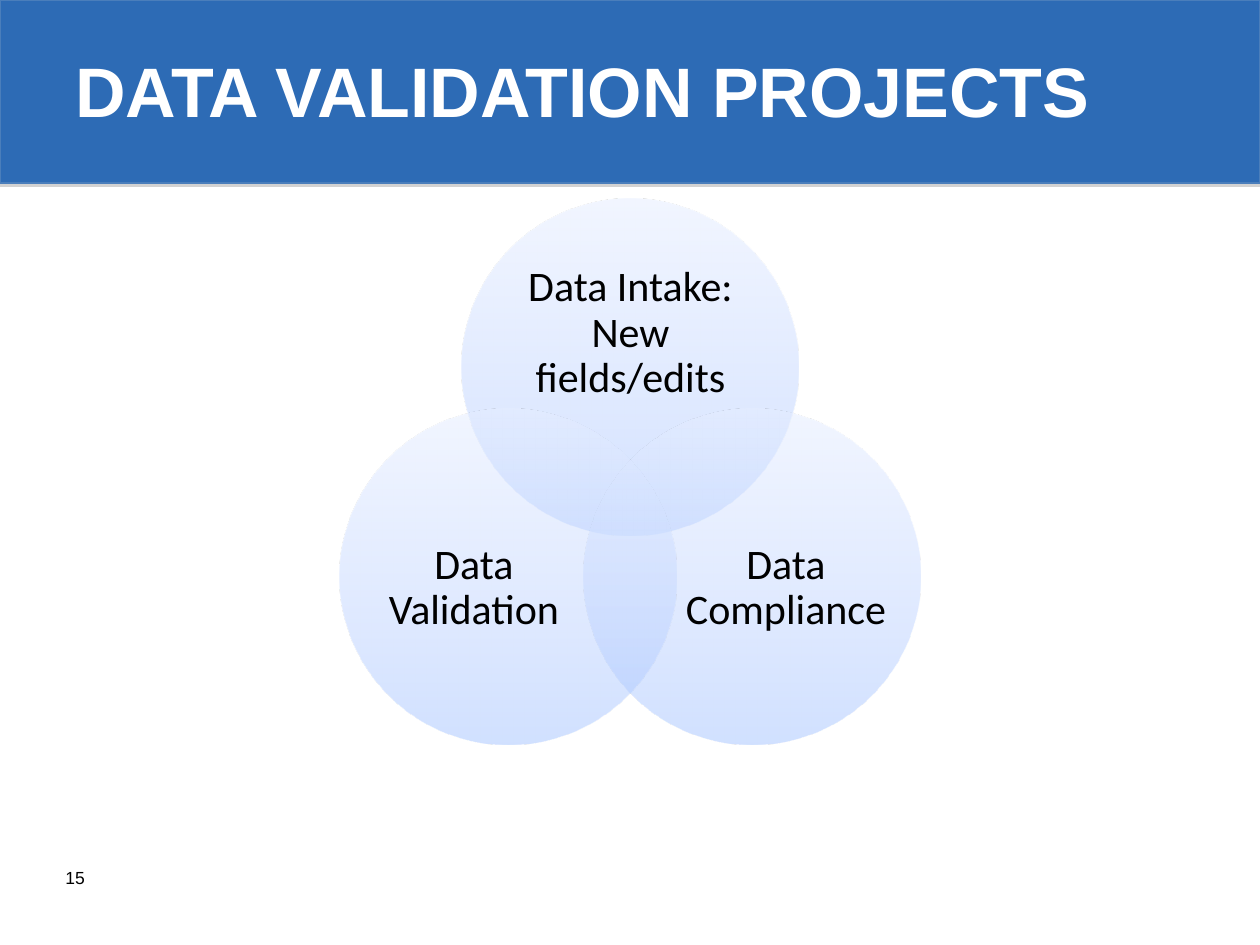
from dataclasses import dataclass

from lxml.etree import SubElement
from pptx import Presentation
from pptx.dml.color import RGBColor
from pptx.enum.shapes import MSO_SHAPE as Shape
from pptx.enum.text import MSO_ANCHOR as Anchor, PP_ALIGN as Align
from pptx.oxml import parse_xml
from pptx.oxml.ns import nsdecls, qn
from pptx.util import Emu, Pt

EMU_PER_PX = 914400 / 126
COLORS = {
    "header": "2D6BB5",
    "header_line": "4A7EBB",
    "shadow": "808080",
    "title": "FFFFFF",
    "text": "000000",
    "circle_bottom": "A4C4FF",
    "circle_middle": "BFD4FF",
    "circle_top": "E6EEFF",
}
CIRCLE_STOPS = [(0, "circle_bottom"), (35, "circle_middle"), (100, "circle_top")]
CIRCLE_SIZE = 336


@dataclass(frozen=True)
class Box:
    left: int
    top: int
    width: int
    height: int

    def emu(self) -> list[Emu]:
        sides = (self.left, self.top, self.width, self.height)
        return [Emu(round(side * EMU_PER_PX)) for side in sides]


@dataclass(frozen=True)
class TextStyle:
    font: str
    size: int
    color: str = "text"
    bold: bool = False
    align: Align = Align.LEFT
    anchor: Anchor = Anchor.TOP
    inset: bool = True
    line_spacing: float = 1.0


@dataclass(frozen=True)
class Topic:
    label: str
    left: int
    top: int
    label_box: Box


TITLE = TextStyle("Arial", 40, "title", bold=True, anchor=Anchor.MIDDLE)
PAGE_NUMBER = TextStyle("Arial", 10)
TOPIC_LABEL = TextStyle("Calibri", 24, align=Align.CENTER, anchor=Anchor.MIDDLE,
                        inset=False, line_spacing=0.9)

TOPICS = [
    Topic("Data Intake: New fields/edits", 462, 199, Box(507, 258, 247, 151)),
    Topic("Data Compliance", 584, 409, Box(685, 496, 202, 185)),
    Topic("Data Validation", 340, 409, Box(373, 496, 202, 185)),
]


def rgb(name: str) -> RGBColor:
    return RGBColor.from_string(COLORS[name])


def add_text(slide, box: Box, text: str, style: TextStyle) -> None:
    frame = slide.shapes.add_textbox(*box.emu()).text_frame
    frame.word_wrap = True
    frame.vertical_anchor = style.anchor
    if not style.inset:
        frame.margin_left = frame.margin_right = 0
        frame.margin_top = frame.margin_bottom = 0
    paragraph = frame.paragraphs[0]
    paragraph.alignment = style.align
    paragraph.line_spacing = style.line_spacing
    run = paragraph.add_run()
    run.text = text
    run.font.name = style.font
    run.font.size = Pt(style.size)
    run.font.bold = style.bold
    run.font.color.rgb = rgb(style.color)


def add_header(slide) -> None:
    header = slide.shapes.add_shape(Shape.RECTANGLE, *Box(0, 0, 1260, 183).emu())
    header.fill.solid()
    header.fill.fore_color.rgb = rgb("header")
    header.line.color.rgb = rgb("header_line")
    header.line.width = Pt(0.75)
    header.shadow.inherit = False
    effects = header._element.spPr.find(qn("a:effectLst"))
    shadow = SubElement(effects, qn("a:outerShdw"), blurRad="0", dist=str(Pt(1.8)),
                        dir="5400000", rotWithShape="0")
    color = SubElement(shadow, qn("a:srgbClr"), val=COLORS["shadow"])
    SubElement(color, qn("a:alpha"), val="35000")


def add_circle(slide, left: int, top: int) -> None:
    """Add a half-transparent circle that darkens towards its bottom."""
    box = Box(left, top, CIRCLE_SIZE, CIRCLE_SIZE)
    circle = slide.shapes.add_shape(Shape.OVAL, *box.emu())
    circle.line.fill.background()
    circle.shadow.inherit = False
    stops = "".join(
        f'<a:gs pos="{percent * 1000}"><a:srgbClr val="{COLORS[color]}">'
        '<a:alpha val="50000"/></a:srgbClr></a:gs>'
        for percent, color in CIRCLE_STOPS)
    gradient = parse_xml(
        f'<a:gradFill {nsdecls("a")} rotWithShape="1"><a:gsLst>{stops}</a:gsLst>'
        '<a:lin ang="16200000" scaled="0"/></a:gradFill>')
    circle._element.spPr.find(qn("a:prstGeom")).addnext(gradient)


def main() -> None:
    presentation = Presentation()
    _, _, presentation.slide_width, presentation.slide_height = Box(0, 0, 1260, 945).emu()
    slide = presentation.slides.add_slide(presentation.slide_layouts[6])

    add_header(slide)
    add_text(slide, Box(63, 10, 1134, 158), "DATA VALIDATION PROJECTS", TITLE)
    add_text(slide, Box(53, 861, 294, 50), "15", PAGE_NUMBER)
    for topic in TOPICS:
        add_circle(slide, topic.left, topic.top)
        add_text(slide, topic.label_box, topic.label, TOPIC_LABEL)

    presentation.save("out.pptx")


if __name__ == "__main__":
    main()
